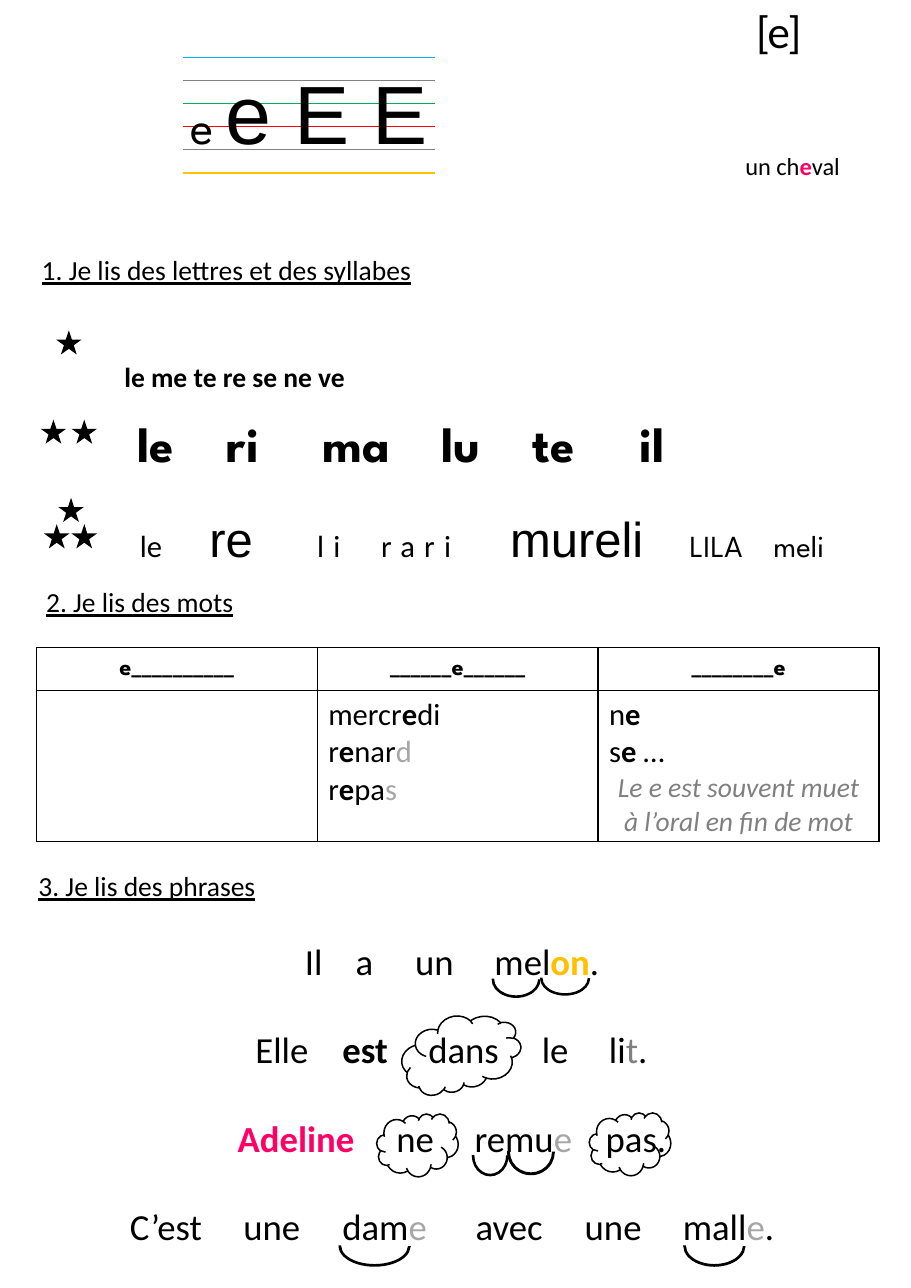
from lxml import etree
from pptx import Presentation
from pptx.dml.color import RGBColor
from pptx.enum.shapes import MSO_SHAPE
from pptx.enum.text import MSO_ANCHOR, PP_ALIGN
from pptx.oxml.ns import qn
from pptx.util import Inches, Pt

LEFT, MID = PP_ALIGN.LEFT, PP_ALIGN.CENTER
STAR, CLOUD, ARC = MSO_SHAPE.STAR_5_POINT, MSO_SHAPE.CLOUD, MSO_SHAPE.BLOCK_ARC
BLACK, WHITE, PINK = "000000", "FFFFFF", "FF0066"
GREY, PALE, GOLD = "808080", "A6A6A6", "FFC000"
SPARTAN = "League Spartan"

# Run styles
BOLD = {"bold": True}
MUTE = {"color": PALE}
TITLE = {"size": 18, "line": True}
BIG = {"size": 32, "font": "Arial"}
WIDE = {"gap": 6}
HEAVY = {"size": 32, "font": SPARTAN, "bold": True}
HINT = {"size": 18, "color": GREY, "italic": True}

# Writing lines, from top to bottom
RULES = ["00B0F0", GREY, "00B050", "FF0000", GREY, GOLD]

# Text boxes: left, top, width, height, alignment, runs
BOXES = [
    (1.48, 0.51, 2.65, 1.01, MID,
     [("e ", {"size": 32, "font": SPARTAN}), ("e E E", {"size": 54, "font": "Arial"})]),
    (5.61, 0, 2.92, 0.57, MID, [("[e]", {"size": 28, "font": "Lato"})]),
    (6.25, 1.32, 1.89, 0.37, MID,
     [("un ch", {"size": 16}), ("e", {"size": 16, "bold": True, "color": PINK}),
      ("val", {"size": 16})]),
    (0.28, 2.25, 7.71, 0.4, LEFT, [("1. Je lis des lettres et des syllabes", TITLE)]),
    (0.32, 5.26, 7.71, 0.4, LEFT, [("2. Je lis des mots", TITLE)]),
    (1.03, 3.22, 6.85, 0.4, LEFT,
     [("le me te re se ne ve", {"size": 18, "bold": True})]),
]

# Spaced words: left of each word, then its runs
SYLLABLES = [(x, [(word, HEAVY)]) for x, word in
             [(1.25, "le"), (2.06, "ri"), (2.93, "ma"),
              (4.01, "lu"), (4.84, "te"), (5.81, "il")]]
MIXED = [(1.27, [("le", {})]), (1.9, [("re", BIG)]), (2.88, [("li", WIDE)]),
         (3.46, [("rari", WIDE)]), (4.63, [("mureli", BIG)]),
         (6.26, [("LILA", {"font": SPARTAN})]), (7.02, [("meli", {"font": SPARTAN})])]
PHRASES = [
    [(2.77, [("Il", {})]), (3.23, [("a", {})]), (3.77, [("un", {})]),
     (4.49, [("mel", {}), ("on", {"bold": True, "color": GOLD}), (".", {})])],
    [(2.32, [("Elle", {})]), (3.11, [("est", BOLD)]), (3.89, [("dans", {})]),
     (4.92, [("le", {})]), (5.53, [("li", {}), ("t", {"color": GREY}), (".", {})])],
    [(2.16, [("Adeline", {"bold": True, "color": PINK})]), (3.6, [("ne", {})]),
     (4.31, [("remu", {}), ("e", MUTE)]), (5.5, [("pas.", {})])],
    [(1.18, [("C’est", {})]), (2.21, [("une", {})]),
     (3.11, [("dam", {}), ("e", MUTE)]), (4.32, [("avec", {})]),
     (5.31, [("une", {})]), (6.2, [("mall", {}), ("e", MUTE), (".", {})])],
]

# Word table
HEADS = ["e__________", "______e______", "________e"]
WORDS = [
    [],
    [(LEFT, [("mercr", {}), ("e", BOLD), ("di", {})]),
     (LEFT, [("r", {}), ("e", BOLD), ("nar", {}), ("d", MUTE)]),
     (LEFT, [("r", {}), ("e", BOLD), ("pa", {}), ("s", MUTE)])],
    [(LEFT, [("n", {}), ("e", BOLD)]),
     (LEFT, [("s", {}), ("e", BOLD), (" …", {})]),
     (MID, [("Le e est souvent muet à l’oral en fin de mot", HINT)])],
]

# Shapes
STARS = [(0.53, 3.02), (0.39, 3.83), (0.67, 3.83),
         (0.55, 4.54), (0.42, 4.78), (0.67, 4.78)]
CLOUDS = [(3.64, 9.22, 1.09, 0.68, 171.1), (5.35, 10.1, 0.74, 0.57, 0),
          (3.42, 10.11, 0.74, 0.57, 0)]
ARCS = [(4.29, 10.31, 0.32, 0.36), (4.61, 10.25, 0.42, 0.41), (4.47, 8.73, 0.43, 0.32),
        (4.91, 8.73, 0.44, 0.3), (3.08, 11.13, 0.64, 0.36), (6.21, 11.13, 0.55, 0.36)]


def rgb(code):
    return RGBColor.from_string(code)


def write(para, runs, base=20):
    for text, look in runs:
        run = para.add_run()
        run.text = text
        font = run.font
        font.size = Pt(look.get("size", base))
        font.name = look.get("font", "Calibri")
        font.bold = look.get("bold", False)
        font.italic = look.get("italic", False)
        font.underline = look.get("line", False)
        font.color.rgb = rgb(look.get("color", BLACK))
        if "gap" in look:
            font._element.set("spc", str(look["gap"] * 100))


def write_words(para, start, words, base):
    """Set each word at its own tab stop, counted from the text edge."""
    tabs = etree.SubElement(para._p.get_or_add_pPr(), qn("a:tabLst"))
    for x, runs in words:
        if x > start:
            etree.SubElement(tabs, qn("a:tab"), pos=str(Inches(x - start)), algn="l")
            (text, look), *rest = runs
            runs = [("\t" + text, look), *rest]
        write(para, runs, base)


def add_box(x, y, w, h):
    frame = slide.shapes.add_textbox(*map(Inches, (x, y, w, h))).text_frame
    frame.word_wrap = True
    return frame


def add_form(kind, x, y, w, h, fill=None, turn=0):
    form = slide.shapes.add_shape(kind, *map(Inches, (x, y, w, h)))
    form.shadow.inherit = False
    form.rotation = turn
    if fill:
        form.fill.solid()
        form.fill.fore_color.rgb = rgb(fill)
    else:
        form.fill.background()
    form.line.color.rgb = rgb(BLACK)
    form.line.width = Pt(1)
    etree.SubElement(form.line._get_or_add_ln(), qn("a:miter"), lim="800000")
    return form


def add_grid(x, y, cols, rows):
    size = map(Inches, (x, y, sum(cols), sum(rows)))
    table = slide.shapes.add_table(len(rows), len(cols), *size).table
    table.first_row = table.horz_banding = False
    for col, width in zip(table.columns, cols):
        col.width = Inches(width)
    for row, height in zip(table.rows, rows):
        row.height = Inches(height)
    for cell in table.iter_cells():
        cell.fill.background()
    return table


def edge_cell(cell, **colors):
    """Draw the given sides; the others stay empty."""
    props = cell._tc.get_or_add_tcPr()
    for i, side in enumerate(("lnL", "lnR", "lnT", "lnB")):
        edge = etree.Element(qn("a:" + side), w=str(Pt(1)))
        if colors.get(side):
            fill = etree.SubElement(edge, qn("a:solidFill"))
            etree.SubElement(fill, qn("a:srgbClr"), val=colors[side])
        else:
            etree.SubElement(edge, qn("a:noFill"))
        props.insert(i, edge)


deck = Presentation()
deck.slide_width, deck.slide_height = Inches(8.27), Inches(11.69)
slide = deck.slides.add_slide(deck.slide_layouts[6])

# Phrases
frame = add_box(0.25, 7.84, 7.71, 3.81)
write(frame.paragraphs[0], [("3. Je lis des phrases", TITLE)])
for i, words in enumerate(PHRASES):
    para = frame.add_paragraph()
    para.space_before = Pt(28.8 if i else 24)
    write_words(para, 0.35, words, 24)

# Mixed syllables in the last row
grid = add_grid(0.32, 2.73, [0.64, 6.9], [0.81] * 3)
for cell in grid.iter_cells():
    edge_cell(cell)
last = grid.cell(2, 1)
last.margin_top = Inches(0.31)
write_words(last.text_frame.paragraphs[0], 1.06, MIXED, 20)

for *place, turn in CLOUDS:
    add_form(CLOUD, *place, turn=turn)

# Writing lines
staff = add_grid(1.66, 0.31, [2.29], [0.21] * 6)
for cell, over, under in zip(staff.iter_cells(), [None, *RULES], RULES):
    cell.margin_top = cell.margin_bottom = 0
    etree.SubElement(cell.text_frame.paragraphs[0]._p, qn("a:endParaRPr"), sz="800")
    edge_cell(cell, lnT=over, lnB=under)

# Word table
table = add_grid(0.33, 5.88, [2.55] * 3, [0.39, 1.36])
for col, (head, lines) in enumerate(zip(HEADS, WORDS)):
    top, body = table.cell(0, col), table.cell(1, col)
    top.vertical_anchor = MSO_ANCHOR.MIDDLE
    title = top.text_frame.paragraphs[0]
    title.alignment = MID
    write(title, [(head, {"size": 16, "font": SPARTAN, "bold": True})])
    for i, (align, runs) in enumerate(lines):
        para = body.text_frame.add_paragraph() if i else body.text_frame.paragraphs[0]
        para.alignment = align
        write(para, runs)
    for cell in (top, body):
        edge_cell(cell, lnL=BLACK, lnR=BLACK, lnT=BLACK, lnB=BLACK)

# Titles and syllables
for *place, align, runs in BOXES:
    para = add_box(*place).paragraphs[0]
    para.alignment = align
    write(para, runs)
write_words(add_box(1.15, 3.7, 6.98, 0.64).paragraphs[0], 1.25, SYLLABLES, 32)

# Stars and syllable arcs
for x, y in STARS:
    add_form(STAR, x, y, 0.19, 0.18, BLACK)
for place in ARCS:
    arc = add_form(ARC, *place, fill=WHITE, turn=180)
    for i, value in enumerate((108.8, 0, 0.03)):
        arc.adjustments[i] = value

deck.save("out.pptx")
